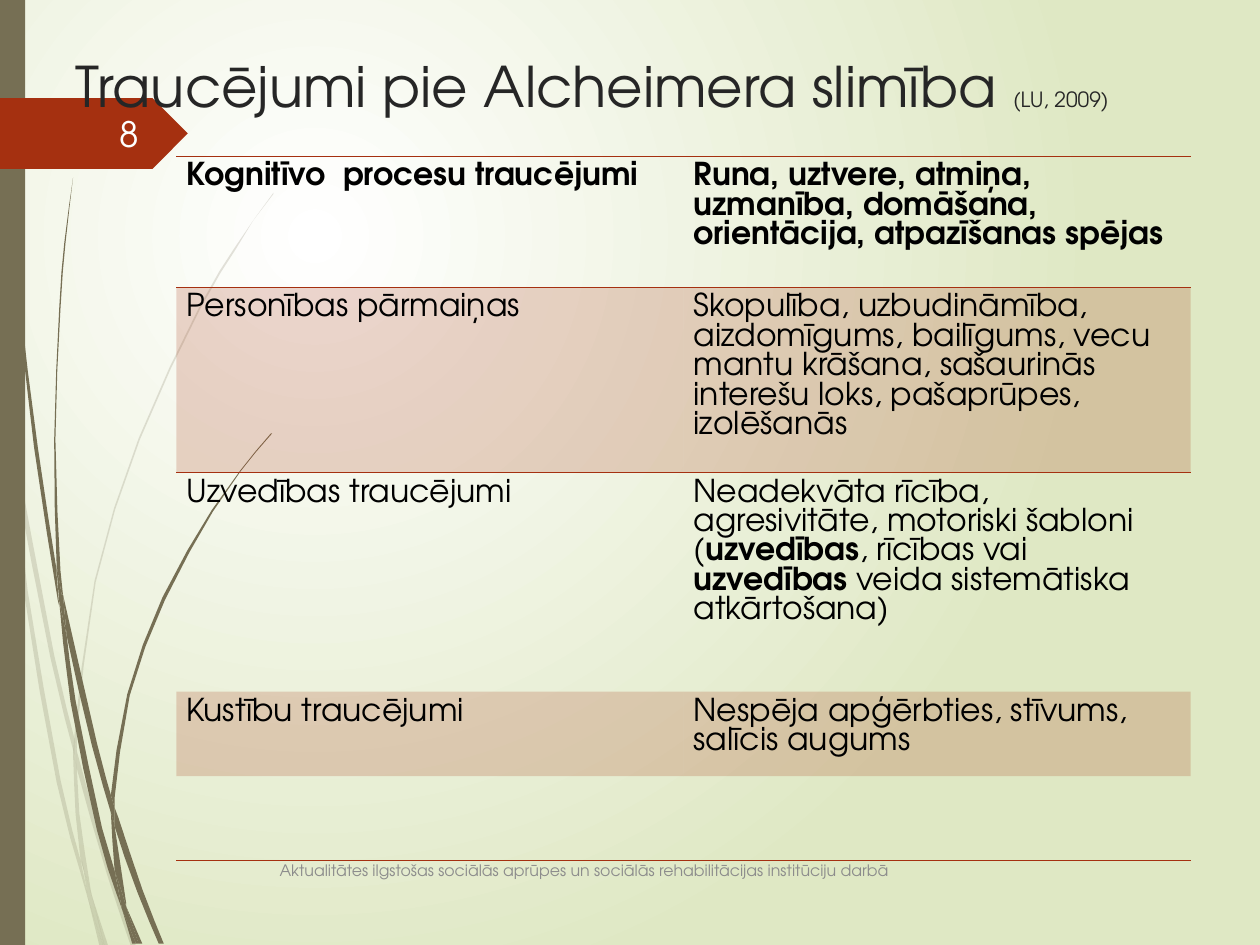
"""Builds the slide on disorders in Alzheimer's disease with its table and grass backdrop."""
import math
from dataclasses import dataclass

from lxml import etree
from pptx import Presentation
from pptx.dml.color import RGBColor
from pptx.enum import shapes, text
from pptx.oxml.ns import qn
from pptx.util import Inches, Pt


@dataclass(frozen=True)
class Theme:
    font: str = "TeX Gyre Adventor"
    olive: str = "766F54"
    red: str = "A53010"
    white: str = "FFFFFF"
    green: str = "DFE8C4"
    title: str = "262626"
    body: str = "000000"
    footer: str = "8C8C8C"
    number: str = "FEFFFF"
    title_size: int = 32
    source_size: int = 12
    body_size: int = 18
    footer_size: int = 9
    number_size: int = 20


theme = Theme()


def format_run(run, size, color, bold=False):
    run.font.name = theme.font
    run.font.size = Pt(size)
    run.font.bold = bold
    run.font.color.rgb = RGBColor.from_string(color)


def paint(fill, color, opacity=100):
    fill.solid()
    fill.fore_color.rgb = RGBColor.from_string(color)
    if opacity < 100:
        color_element = fill._xPr.find(qn("a:solidFill"))[0]
        etree.SubElement(color_element, qn("a:alpha"), val=str(opacity * 1000))


presentation = Presentation()
presentation.slide_width = Inches(10)
presentation.slide_height = Inches(7.5)
slide = presentation.slides.add_slide(presentation.slide_layouts[5])

background = slide.background.fill
background.gradient()
for stop, color, position in zip(background.gradient_stops, (theme.white, theme.green), (0, 1)):
    stop.color.rgb = RGBColor.from_string(color)
    stop.position = position
gradient = slide.element.find(".//" + qn("a:gradFill"))
gradient.remove(gradient.find(qn("a:lin")))
circle = etree.SubElement(gradient, qn("a:path"), path="circle")
etree.SubElement(circle, qn("a:fillToRect"), l="50000", t="50000", r="100000", b="100000")

pale_blades = [
    [(0.08, 3.5), (0.06, 3.22), (0, 2.82), (0, 2.99), (0.07, 3.44)],
    [(0.4, 5.22), (0.59, 5.99), (0.59, 5.86), (0.43, 5.2), (0.1, 3.45), (0.12, 3.76)],
    [(0.64, 6.07), (0.61, 5.96), (0.61, 6.1), (0.85, 6.94), (1.04, 7.51), (1.08, 7.51),
     (0.88, 6.92)],
    [(0.83, 7.51), (0.86, 7.51), (0.73, 7.11)],
    [(0.64, 6.83), (0.48, 6.19), (0.22, 4.69), (0.12, 3.76), (0.08, 3.5), (0.19, 4.7),
     (0.45, 6.21), (0.64, 6.93), (0.7, 7.14), (0.69, 7.07)],
    [(0.58, 5.99), (0.6, 6.46), (0.64, 6.83), (0.67, 6.92), (0.73, 7.11), (0.72, 7.06),
     (0.63, 6.46), (0.61, 6.1), (0.61, 6.08)],
    [(0.61, 5.84), (0.76, 4.62), (1.11, 3.49), (1.59, 2.45), (1.87, 1.98), (2.01, 1.75),
     (2.17, 1.54), (2.17, 1.53), (2.01, 1.75), (1.86, 1.97), (1.58, 2.44), (1.1, 3.48),
     (0.75, 4.61), (0.59, 5.84), (0.59, 5.86), (0.61, 5.96)],
    [(0.7, 7.14), (0.79, 7.51), (0.82, 7.51)],
    [(0.61, 6.08), (0.61, 6.1), (0.61, 5.96), (0.59, 5.86), (0.58, 5.99)],
    [(0.67, 6.92), (0.65, 6.83), (0.69, 7.07), (0.7, 7.14), (0.82, 7.51), (0.83, 7.51),
     (0.73, 7.11)],
]
dark_blades = [
    [(0.05, 1.1), (0.14, 2.33), (0.27, 3.55), (0.46, 4.77), (0.47, 4.81), (0.45, 4.57),
     (0.45, 4.53), (0.3, 3.55), (0.15, 2.32), (0.06, 1.09), (0.04, 0.48), (0.03, 0),
     (0.02, 0), (0.03, 0.48)],
    [(0.73, 5.92), (0.88, 6.45), (0.88, 6.33), (0.88, 6.31), (0.77, 5.9), (0.5, 4.72),
     (0.53, 5.05)],
    [(0.94, 6.49), (0.91, 6.41), (0.91, 6.56), (1.09, 7.08), (1.26, 7.49), (1.3, 7.49),
     (1.13, 7.06)],
    [(0.91, 6.91), (0.81, 6.57), (0.6, 5.56), (0.53, 5.05), (0.47, 4.77), (0.56, 5.57),
     (0.77, 6.59), (0.92, 7.08), (0.97, 7.22), (0.96, 7.17)],
    [(0.5, 4.72), (0.48, 4.53), (0.44, 3.49), (0.48, 2.45), (0.52, 1.93), (0.58, 1.41),
     (0.51, 1.93), (0.47, 2.45), (0.43, 3.49), (0.45, 4.49), (0.49, 4.72)],
    [(1.1, 7.49), (1.13, 7.49), (1, 7.19)],
    [(0.47, 4.77), (0.53, 5.05), (0.5, 4.72), (0.49, 4.72), (0.45, 4.49), (0.45, 4.53)],
    [(0.91, 6.33), (1.03, 5.52), (1.31, 4.76), (1.69, 4.06), (1.91, 3.74), (2.03, 3.59),
     (2.16, 3.44), (2.15, 3.44), (2.03, 3.58), (1.91, 3.73), (1.68, 4.05), (1.29, 4.74),
     (1.01, 5.51), (0.88, 6.31), (0.91, 6.41)],
    [(0.97, 7.22), (1.05, 7.49), (1.08, 7.49)],
    [(0.88, 6.45), (0.91, 6.91), (0.96, 7.06), (1, 7.19), (1, 7.16), (0.91, 6.56), (0.9, 6.51)],
    [(0.88, 6.45), (0.9, 6.51), (0.91, 6.56), (0.91, 6.41), (0.88, 6.31), (0.88, 6.33)],
    [(0.96, 7.06), (0.91, 6.91), (0.96, 7.17), (0.97, 7.22), (1.08, 7.49), (1.1, 7.49),
     (1, 7.19)],
]
for index, points in enumerate(pale_blades + dark_blades):
    outline = []
    for corner, start in enumerate(points):
        before, end = points[corner - 1], points[(corner + 1) % len(points)]
        after = points[(corner + 2) % len(points)]
        outline.append(start)
        if math.dist(start, end) > 0.4:
            before = before if (start[1] - before[1]) * (end[1] - start[1]) > 0 else start
            after = after if (after[1] - end[1]) * (end[1] - start[1]) > 0 else end
            outline.append([(9 * (b + c) - a - d) / 16
                            for a, b, c, d in zip(before, start, end, after)])
    outline = [(Inches(x), Inches(y)) for x, y in outline]
    builder = slide.shapes.build_freeform(*outline[0])
    builder.add_line_segments(outline[1:])
    blade = builder.convert_to_shape()
    paint(blade.fill, theme.olive, 20 if index < len(pale_blades) else 100)
    blade.line.fill.background()
    blade.shadow.inherit = False

for kind, top, width, height, color in [
    (shapes.MSO_SHAPE.RECTANGLE, 0, 0.2, 7.5, theme.olive),
    (shapes.MSO_SHAPE.PENTAGON, 0.78, 1.49, 0.56, theme.red),
]:
    shape = slide.shapes.add_shape(kind, 0, Inches(top), Inches(width), Inches(height))
    paint(shape.fill, color)
    shape.line.fill.background()
    shape.shadow.inherit = False

title = slide.shapes.title
shape.element.addnext(title.element)
title.left, title.top, title.width, title.height = Inches(0.5), Inches(0.36), Inches(9), Inches(0.77)
title.text_frame.auto_size = text.MSO_AUTO_SIZE.NONE
title.text_frame.vertical_anchor = text.MSO_ANCHOR.TOP
paragraph = title.text_frame.paragraphs[0]
paragraph.alignment = text.PP_ALIGN.LEFT
for wording, size in [("Traucējumi pie Alcheimera slimība ", theme.title_size),
                      ("(LU, 2009)", theme.source_size)]:
    run = paragraph.add_run()
    run.text = wording
    format_run(run, size, theme.title)

rows = [
    (1.04, ["Kognitīvo  procesu traucējumi"],
     ["Runa, uztvere, atmiņa, uzmanība, domāšana, orientācija, atpazīšanas spējas"]),
    (1.47, ["Personības pārmaiņas"],
     ["Skopulība, uzbudināmība, aizdomīgums, bailīgums, vecu mantu krāšana, "
      "sašaurinās interešu loks, pašaprūpes, izolēšanās"]),
    (1.74, ["Uzvedības traucējumi"],
     ["Neadekvāta rīcība, agresivitāte, motoriski šabloni (", "uzvedības", ", rīcības vai ",
      "uzvedības", " veida sistemātiska atkārtošana)"]),
    (0.67, ["Kustību traucējumi"], ["Nespēja apģērbties, stīvums, salīcis augums"]),
    (0.67, [], []),
]
row_borders = {0: ("a:lnT", "a:lnB"), 1: ("a:lnT",), 4: ("a:lnB",)}
frame = slide.shapes.add_table(len(rows), 2, Inches(1.4), Inches(1.24),
                               Inches(8.05), Inches(sum(row[0] for row in rows)))
frame.element.find(".//" + qn("a:tableStyleId")).text = "{2D5ABB26-0587-4C30-8999-92F81FD0307C}"
table = frame.table
table.horz_banding = False
for row_index, (height, *contents) in enumerate(rows):
    table.rows[row_index].height = Inches(height)
    for column, parts in enumerate(contents):
        cell = table.cell(row_index, column)
        cell.margin_left = cell.margin_right = Inches(0.08)
        cell.margin_top = cell.margin_bottom = Inches(0.05)
        paragraph = cell.text_frame.paragraphs[0]
        for part_index, part in enumerate(parts):
            run = paragraph.add_run()
            run.text = part
            format_run(run, theme.body_size, theme.body, row_index == 0 or part_index % 2 == 1)
        properties = cell._tc.get_or_add_tcPr()
        for side in row_borders.get(row_index, ()):
            border = etree.SubElement(properties, qn(side), w=str(Pt(1)))
            line_fill = etree.SubElement(border, qn("a:solidFill"))
            etree.SubElement(line_fill, qn("a:srgbClr"), val=theme.red)
        if row_index in (1, 3):
            paint(cell.fill, theme.red, 20)
        else:
            cell.fill.background()

for wording, left, top, width, size, color, alignment in [
    ("Aktualitātes ilgstošas sociālās aprūpes un sociālās rehabilitācijas institūciju darbā",
     2.12, 6.71, 6.25, theme.footer_size, theme.footer, text.PP_ALIGN.LEFT),
    ("8", 0.56, 0.86, 0.64, theme.number_size, theme.number, text.PP_ALIGN.RIGHT),
]:
    box = slide.shapes.add_textbox(Inches(left), Inches(top), Inches(width), Inches(0.4))
    box.text_frame.word_wrap = True
    box.text_frame.vertical_anchor = text.MSO_ANCHOR.MIDDLE
    box.text_frame.text = wording
    box.text_frame.paragraphs[0].alignment = alignment
    format_run(box.text_frame.paragraphs[0].runs[0], size, color)

presentation.save("out.pptx")
